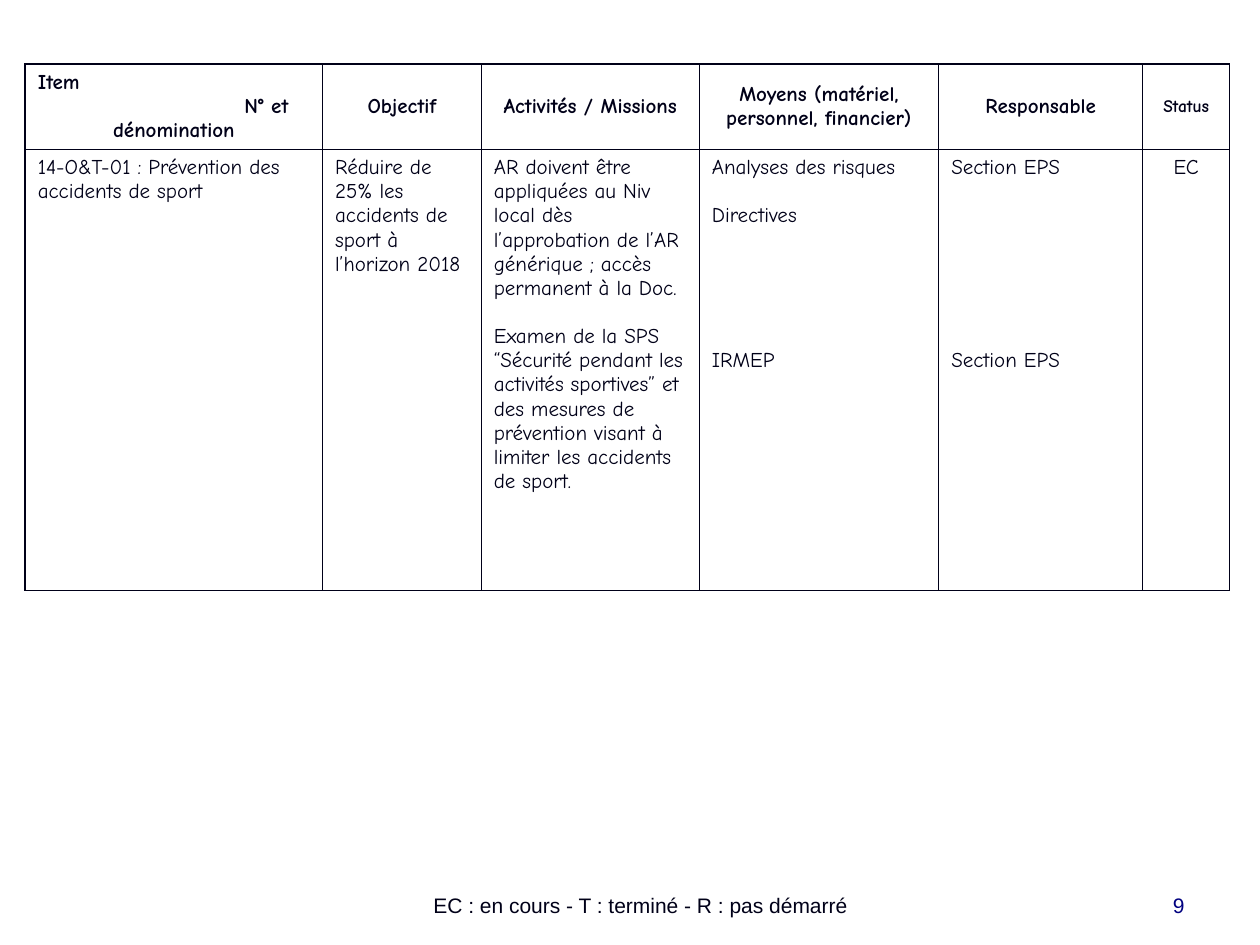
from dataclasses import dataclass

import lxml.etree
import pptx
import pptx.dml.color
import pptx.enum.text
import pptx.oxml.ns
import pptx.slide
import pptx.table
import pptx.util

Inches = pptx.util.Inches
Pt = pptx.util.Pt
Align = pptx.enum.text.PP_ALIGN
Anchor = pptx.enum.text.MSO_ANCHOR


@dataclass(frozen=True)
class Theme:
    ink: str = "000018"
    number: str = "000080"
    table_font: str = "Comic Neue"
    footer_font: str = "Arial"
    text_size: float = 12
    small_size: float = 10
    line_height: float = 13.8
    border: float = 1


THEME = Theme()


@dataclass(frozen=True)
class Line:
    """One paragraph; gap counts the empty lines above it."""
    text: str
    align: Align = Align.LEFT
    gap: int = 0
    indent: float = 0
    size: float = THEME.text_size


@dataclass(frozen=True)
class Column:
    width: float
    header: list[Line]
    body: list[Line]


@dataclass(frozen=True)
class FooterItem:
    text: str
    left: float
    width: float
    align: Align
    color: str


COLUMNS = [
    Column(2.36,
           [Line("Item"), Line("N° et", indent=1.64),
            Line("dénomination", Align.CENTER)],
           [Line("14-O&T-01 : Prévention des accidents de sport")]),
    Column(1.26,
           [Line("Objectif", Align.CENTER)],
           [Line("Réduire de 25% les accidents de sport à l’horizon 2018")]),
    Column(1.73,
           [Line("Activités / Missions", Align.CENTER)],
           [Line("AR doivent être appliquées au Niv local dès l’approbation "
                 "de l’AR générique ; accès permanent à la Doc."),
            Line("Examen de la SPS “Sécurité pendant les activités sportives” "
                 "et des mesures de prévention visant à limiter les accidents "
                 "de sport.", gap=1)]),
    Column(1.9,
           [Line("Moyens (matériel, personnel, financier)", Align.CENTER)],
           [Line("Analyses des risques"), Line("Directives", gap=1),
            Line("IRMEP", gap=5)]),
    Column(1.62,
           [Line("Responsable", Align.CENTER)],
           [Line("Section EPS"), Line("Section EPS", gap=7)]),
    Column(0.69,
           [Line("Status", Align.CENTER, size=THEME.small_size)],
           [Line("EC", Align.CENTER)]),
]
ROW_HEIGHTS = [0.67, 3.5]

FOOTER = [
    FooterItem("EC : en cours - T : terminé - R : pas démarré",
               2.33, 5.51, Align.CENTER, THEME.ink),
    FooterItem("9", 7.17, 2.33, Align.RIGHT, THEME.number),
]


def format_font(font, name: str, size: float, color: str, bold: bool = False) -> None:
    font.name = name
    font.size = Pt(size)
    font.bold = bold
    font.color.rgb = pptx.dml.color.RGBColor.from_string(color)


def add_borders(cell: pptx.table._Cell) -> None:
    properties = cell._tc.get_or_add_tcPr()
    qn = pptx.oxml.ns.qn
    for side in ("a:lnL", "a:lnR", "a:lnT", "a:lnB"):
        border = lxml.etree.SubElement(properties, qn(side), w=str(Pt(THEME.border)))
        fill = lxml.etree.SubElement(border, qn("a:solidFill"))
        lxml.etree.SubElement(fill, qn("a:srgbClr"), val=THEME.ink)


def fill_cell(cell: pptx.table._Cell, lines: list[Line], is_header: bool) -> None:
    add_borders(cell)
    cell.fill.background()
    cell.vertical_anchor = Anchor.MIDDLE if is_header else Anchor.TOP
    cell.text_frame.text = "\n".join(line.text for line in lines)
    for para, line in zip(cell.text_frame.paragraphs, lines):
        para.alignment = line.align
        if line.gap:
            para.space_before = Pt(line.gap * THEME.line_height)
        if line.indent:
            para._p.get_or_add_pPr().set("marL", str(Inches(line.indent)))
        for span in para.runs:
            format_font(span.font, THEME.table_font, line.size, THEME.ink, is_header)


def add_action_table(page: pptx.slide.Slide) -> None:
    width = sum(column.width for column in COLUMNS)
    frame = page.shapes.add_table(
        len(ROW_HEIGHTS), len(COLUMNS), Inches(0.2), Inches(0.51),
        Inches(width), Inches(sum(ROW_HEIGHTS)))
    table = frame.table
    table.horz_banding = False
    for row, height in zip(table.rows, ROW_HEIGHTS):
        row.height = Inches(height)
    for index, column in enumerate(COLUMNS):
        table.columns[index].width = Inches(column.width)
        fill_cell(table.cell(0, index), column.header, True)
        fill_cell(table.cell(1, index), column.body, False)


def add_footer_item(page: pptx.slide.Slide, item: FooterItem) -> None:
    box = page.shapes.add_textbox(
        Inches(item.left), Inches(6.83), Inches(item.width), Inches(0.5))
    box.text_frame.word_wrap = True
    box.text_frame.vertical_anchor = Anchor.BOTTOM
    box.text_frame.text = item.text
    para = box.text_frame.paragraphs[0]
    para.alignment = item.align
    format_font(para.runs[0].font, THEME.footer_font, THEME.text_size, item.color)


def main() -> None:
    deck = pptx.Presentation()
    deck.slide_width = Inches(10)
    deck.slide_height = Inches(7.5)
    # The page has no title, so it uses the blank layout
    page = deck.slides.add_slide(deck.slide_layouts.get_by_name("Blank"))

    # Action plan
    add_action_table(page)

    # Status legend and page number
    for item in FOOTER:
        add_footer_item(page, item)

    deck.save("out.pptx")


if __name__ == "__main__":
    main()
